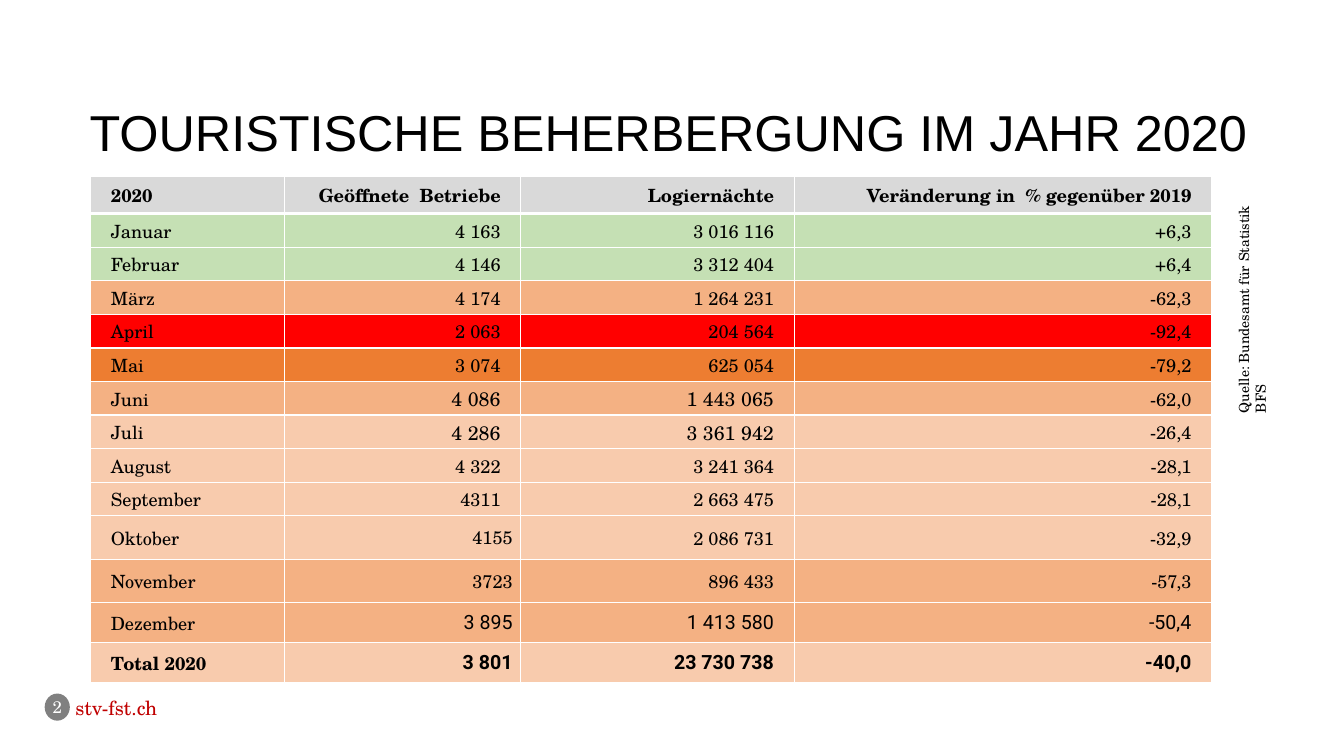
"""Build the slide on Swiss tourist accommodation in 2020."""
from lxml.etree import SubElement
from pptx import Presentation
from pptx.dml.color import RGBColor
from pptx.enum.shapes import MSO_SHAPE
from pptx.enum.text import MSO_ANCHOR as Anchor, PP_ALIGN as Align
from pptx.oxml.ns import qn
from pptx.util import Pt

BLACK = RGBColor(0x00, 0x00, 0x00)
WHITE = RGBColor(0xFF, 0xFF, 0xFF)
GREY = RGBColor(0x80, 0x80, 0x80)
HEADER = RGBColor(0xD9, 0xD9, 0xD9)
GREEN = RGBColor(0xC5, 0xE0, 0xB4)
PEACH = RGBColor(0xF8, 0xCB, 0xAD)
APRICOT = RGBColor(0xF4, 0xB1, 0x83)
ORANGE = RGBColor(0xED, 0x7D, 0x31)
RED = RGBColor(0xFF, 0x00, 0x00)
DARK_RED = RGBColor(0xC0, 0x00, 0x00)
SERIF, SANS, ROBOTO = "TeX Gyre Schola", "Arial", "Roboto"


def write(paragraph, text, size, font=SERIF, color=BLACK, bold=False):
    run = paragraph.add_run()
    run.text = text
    run.font.size = Pt(size)
    run.font.name = font
    run.font.color.rgb = color
    run.font.bold = bold


def add_border(cell, side, width):
    line = SubElement(cell._tc.get_or_add_tcPr(), qn(f"a:{side}"), w=str(Pt(width)))
    fill = SubElement(line, qn("a:solidFill"))
    SubElement(fill, qn("a:srgbClr"), val=str(WHITE))


prs = Presentation()
prs.slide_width, prs.slide_height = Pt(960), Pt(540)
slide = prs.slides.add_slide(prs.slide_layouts[6])
shapes = slide.shapes

website = shapes.add_textbox(Pt(46.8), Pt(493.2), Pt(146.9), Pt(31.7)).text_frame
website.word_wrap = True
write(website.paragraphs[0], "stv-fst.ch", 14, color=DARK_RED)

page_badge = shapes.add_shape(MSO_SHAPE.OVAL, Pt(31.9), Pt(495.4), Pt(18), Pt(19.4))
page_badge.shadow.inherit = False
page_badge.fill.solid()
page_badge.fill.fore_color.rgb = GREY
page_badge.line.fill.background()
page_number = page_badge.text_frame
page_number.margin_left = page_number.margin_right = 0
page_number.margin_top = page_number.margin_bottom = 0
page_number.word_wrap = False
page_number.vertical_anchor = Anchor.MIDDLE
page_number.paragraphs[0].alignment = Align.CENTER
write(page_number.paragraphs[0], "2", 12, color=WHITE)

title = shapes.add_textbox(Pt(56.9), Pt(55.4), Pt(880.6), Pt(82.8)).text_frame
title.word_wrap = True
title.vertical_anchor = Anchor.MIDDLE
title.paragraphs[0].line_spacing = 0.9
write(title.paragraphs[0], "TOURISTISCHE BEHERBERGUNG IM JAHR 2020", 36, SANS)

MONTHS = [
    (HEADER, "2020", "Geöffnete  Betriebe", "Logiernächte", "Veränderung in  % gegenüber 2019"),
    (GREEN, "Januar", "4 163", "3 016 116", "+6,3"),
    (GREEN, "Februar", "4 146", "3 312 404", "+6,4"),
    (APRICOT, "März", "4 174", "1 264 231", "-62,3"),
    (RED, "April", "2 063", "204 564", "-92,4"),
    (ORANGE, "Mai", "3 074", "625 054", "-79,2"),
    (APRICOT, "Juni", "4 086", "1 443 065", "-62,0"),
    (PEACH, "Juli", "4 286", "3 361 942", "-26,4"),
    (PEACH, "August", "4 322", "3 241 364", "-28,1"),
    (PEACH, "September", "4311", "2 663 475", "-28,1"),
    (PEACH, "Oktober", "4155", "2 086 731", "-32,9"),
    (APRICOT, "November", "3723", "896 433", "-57,3"),
    (APRICOT, "Dezember", "3 895", "1 413 580", "-50,4"),
    (PEACH, "Total 2020", "3 801", "23 730 738", "-40,0"),
]
COLUMN_WIDTHS = [138.2, 169, 195.3, 298.2]
ROW_HEIGHTS = [26.4] + [24] * 9 + [31] * 2 + [28.5] * 2
OKTOBER, DEZEMBER, TOTAL = 10, 12, 13

overnight_stays = shapes.add_table(
    len(MONTHS), len(COLUMN_WIDTHS), Pt(64.8), Pt(126.2),
    Pt(sum(COLUMN_WIDTHS)), Pt(sum(ROW_HEIGHTS))).table
overnight_stays.horz_banding = False
for column, width in zip(overnight_stays.columns, COLUMN_WIDTHS):
    column.width = Pt(width)
for row, height in zip(overnight_stays.rows, ROW_HEIGHTS):
    row.height = Pt(height)

for r, (color, *values) in enumerate(MONTHS):
    for c, value in enumerate(values):
        cell = overnight_stays.cell(r, c)
        add_border(cell, "lnL", 1)
        add_border(cell, "lnR", 1)
        add_border(cell, "lnT", 3 if r == 1 else 1)
        add_border(cell, "lnB", 3 if r == 0 else 1)
        cell.fill.solid()
        cell.fill.fore_color.rgb = color
        cell.vertical_anchor = Anchor.MIDDLE
        narrow = r >= OKTOBER and c == 1
        cell.margin_left = cell.margin_right = Pt(5.76 if narrow else 14.4)
        cell.margin_top = Pt(5.76 if narrow else 0.72)
        cell.margin_bottom = Pt(5.76 if narrow else 0)
        roboto = r >= DEZEMBER and c > 0
        large = roboto or (values[0] in ("Juni", "Juli") and c in (1, 2))
        paragraph = cell.text_frame.paragraphs[0]
        paragraph.alignment = Align.RIGHT if c else Align.LEFT
        write(paragraph, value, 14 if large else 13, ROBOTO if roboto else SERIF,
              bold=r in (0, TOTAL))

source_box = shapes.add_textbox(Pt(800.6), Pt(204.5), Pt(175.7), Pt(19.4))
source_box.rotation = 270
source_box.text_frame.word_wrap = True
write(source_box.text_frame.paragraphs[0], "Quelle: Bundesamt für Statistik BFS", 10)

prs.save("out.pptx")
